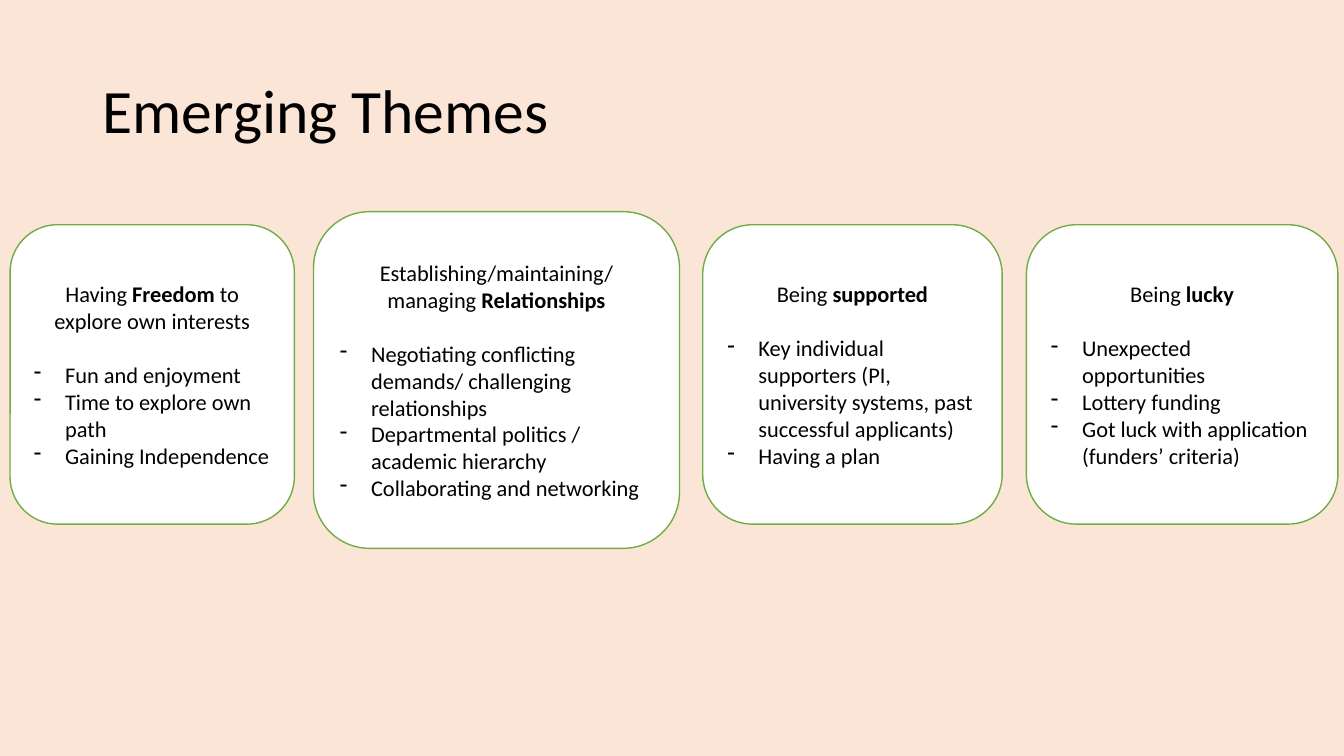
import pptx
import pptx.dml.color
import pptx.enum.shapes
import pptx.enum.text
import pptx.util
from dataclasses import dataclass
from lxml import etree


def rgb(code):
    return pptx.dml.color.RGBColor.from_string(code)


@dataclass(frozen=True)
class Theme:
    font: str = "Calibri"
    title_size: int = 44
    body_size: int = 16
    heading_gap: float = 19.5  # one line of body text
    background: str = "FBE5D6"
    card: str = "FFFFFF"
    border: str = "70AD47"
    text: str = "000000"


THEME = Theme()
WIDTH, HEIGHT = pptx.util.Inches(13.33), pptx.util.Inches(7.5)
BULLET_INDENT = pptx.util.Inches(0.31)
ANCHOR, ALIGN = pptx.enum.text.MSO_ANCHOR, pptx.enum.text.PP_ALIGN

# Vertical bands: top and height in percent of the slide height
STANDARD, TALL = (29.73, 39.6), (28, 44.53)

# Left and width in percent of the slide width, band, heading (before, bold, after), points
CARDS = [
    (0.75, 21.15, STANDARD, ("Having ", "Freedom", " to explore own interests"),
     ["Fun and enjoyment", "Time to explore own path", "Gaining Independence"]),
    (23.33, 27.23, TALL, ("Establishing/maintaining/ managing ", "Relationships", ""),
     ["Negotiating conflicting demands/ challenging relationships",
      "Departmental politics / academic hierarchy",
      "Collaborating and networking"]),
    (52.29, 22.28, STANDARD, ("Being ", "supported", ""),
     ["Key individual supporters (PI, university systems, past successful applicants)",
      "Having a plan"]),
    (76.37, 23.18, STANDARD, ("Being ", "lucky", ""),
     ["Unexpected opportunities", "Lottery funding",
      "Got luck with application (funders’ criteria)"]),
]


def box(left, top, width, height):
    """Turn percentages of the slide into lengths."""
    return (round(WIDTH * left / 100), round(HEIGHT * top / 100),
            round(WIDTH * width / 100), round(HEIGHT * height / 100))


def style(p, size, align):
    p.font.name = THEME.font
    p.font.size = pptx.util.Pt(size)
    p.font.color.rgb = rgb(THEME.text)
    p.alignment = align


def set_frame(tf):
    tf.word_wrap = True
    tf.vertical_anchor = ANCHOR.MIDDLE


def add_title(slide, text):
    tf = slide.shapes.add_textbox(*box(6.9, 5.33, 86.27, 19.33)).text_frame
    set_frame(tf)
    p = tf.paragraphs[0]
    p.text = text
    p.line_spacing = 0.9
    style(p, THEME.title_size, ALIGN.LEFT)


def add_bullet(tf, text):
    p = tf.add_paragraph()
    p.text = text
    style(p, THEME.body_size, ALIGN.LEFT)
    pPr = p._p.get_or_add_pPr()
    pPr.set("marL", str(BULLET_INDENT))
    pPr.set("indent", str(-BULLET_INDENT))
    bullet = etree.Element(pptx.oxml.ns.qn("a:buChar"), char="-")
    pPr.insert_element_before(bullet, "a:tabLst", "a:defRPr", "a:extLst")


def add_card(slide, left, width, band, heading, points):
    top, height = band
    sp = slide.shapes.add_shape(pptx.enum.shapes.MSO_SHAPE.ROUNDED_RECTANGLE,
                                *box(left, top, width, height))
    sp.shadow.inherit = False
    sp.fill.solid()
    sp.fill.fore_color.rgb = rgb(THEME.card)
    sp.line.color.rgb = rgb(THEME.border)
    sp.line.width = pptx.util.Pt(1)

    # Heading with its key word in bold
    tf = sp.text_frame
    set_frame(tf)
    p = tf.paragraphs[0]
    style(p, THEME.body_size, ALIGN.CENTER)
    p.space_after = pptx.util.Pt(THEME.heading_gap)
    before, key, after = heading
    for text, bold in ((before, False), (key, True), (after, False)):
        if text:
            r = p.add_run()
            r.text = text
            r.font.bold = bold

    for point in points:
        add_bullet(tf, point)


def main():
    prs = pptx.Presentation()
    prs.slide_width, prs.slide_height = WIDTH, HEIGHT
    slide = prs.slides.add_slide(prs.slide_layouts[6])
    slide.background.fill.solid()
    slide.background.fill.fore_color.rgb = rgb(THEME.background)

    add_title(slide, "Emerging Themes")
    for card in CARDS:
        add_card(slide, *card)
    prs.save("out.pptx")


if __name__ == "__main__":
    main()
